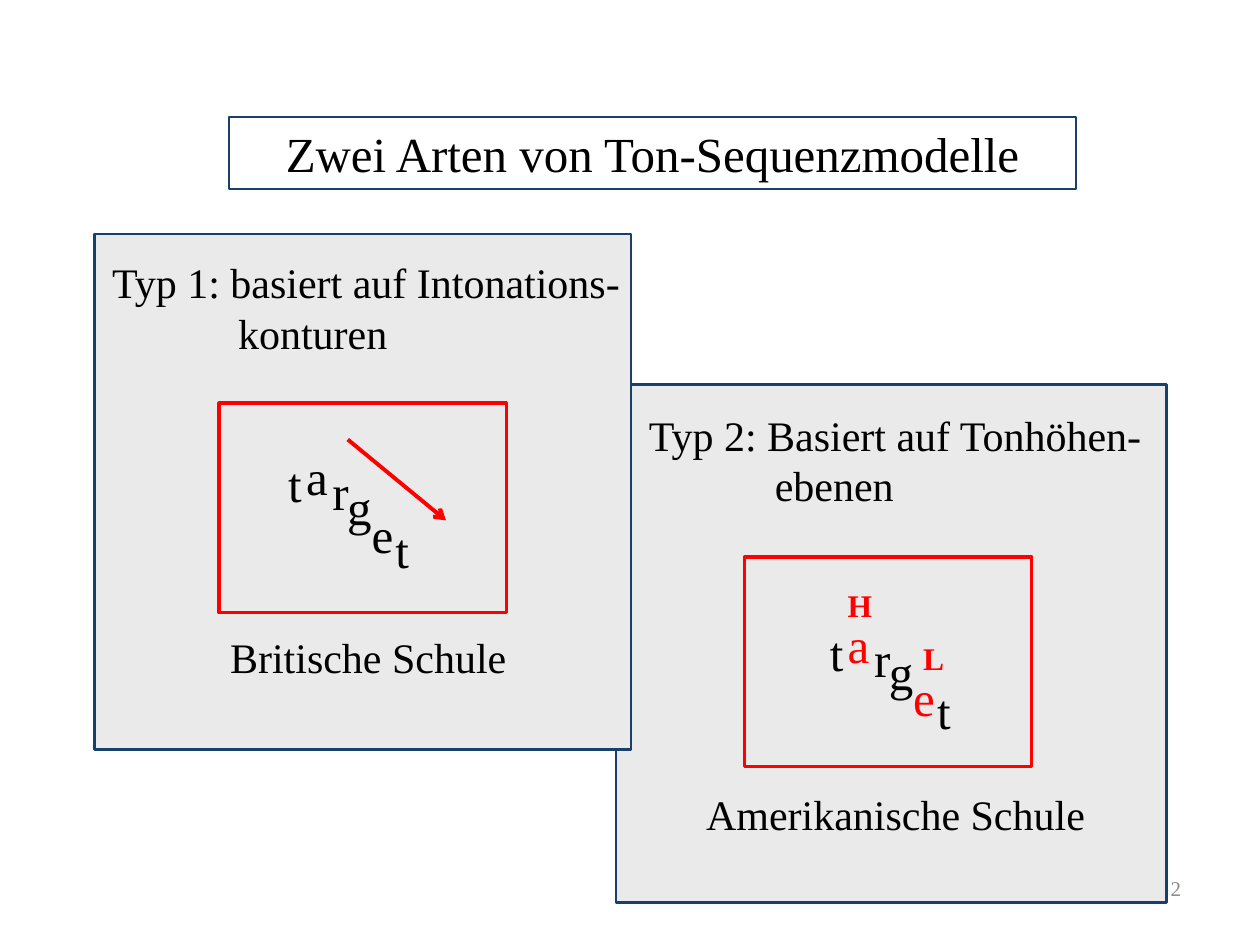
from lxml import etree
from pptx import Presentation
from pptx.dml.color import RGBColor
from pptx.enum.shapes import MSO_CONNECTOR, MSO_SHAPE
from pptx.enum.text import MSO_ANCHOR, MSO_AUTO_SIZE, PP_ALIGN
from pptx.oxml.ns import qn
from pptx.util import Cm, Pt

LEFT, CENTER, RIGHT = PP_ALIGN.LEFT, PP_ALIGN.CENTER, PP_ALIGN.RIGHT
TOP, MIDDLE = MSO_ANCHOR.TOP, MSO_ANCHOR.MIDDLE
RECTANGLE, STRAIGHT = MSO_SHAPE.RECTANGLE, MSO_CONNECTOR.STRAIGHT
NO_AUTOFIT = MSO_AUTO_SIZE.NONE
TITLE_ONLY = 5

FONT = "Times New Roman"
COLORS = {
    "text": "000000",
    "accent": "FF0000",
    "border": "19406B",
    "panel": "EAEAEA",
    "number": "8C8C8C",
}

# Letter, horizontal offset from the start of the word and box width, in cm
TARGET = [
    ("t", 0, 0.79),
    ("a", 0.36, 0.97),
    ("r", 0.89, 0.84),
    ("g", 1.19, 1.02),
    ("e", 1.68, 0.97),
    ("t", 2.16, 0.79),
]
BRITISH_DROPS = [0, -0.15, 0.15, 0.46, 1.02, 1.32]
AMERICAN_DROPS = [0, -0.15, 0.13, 0.38, 0.91, 1.17]


def color(name):
    return RGBColor.from_string(COLORS[name])


def write(shape, text, size, ink="text", align=LEFT, bold=False, anchor=TOP):
    frame = shape.text_frame
    frame.text = text
    frame.word_wrap = False
    frame.auto_size = NO_AUTOFIT
    frame.vertical_anchor = anchor
    para = frame.paragraphs[0]
    para.alignment = align
    for span in para.runs:
        span.font.name = FONT
        span.font.size = Pt(size)
        span.font.bold = bold
        span.font.color.rgb = color(ink)


def add_label(shapes, place, text, size, **style):
    box = shapes.add_textbox(*map(Cm, place))
    write(box, text, size, **style)
    return box


def set_outline(shape, name, width):
    shape.line.color.rgb = color(name)
    shape.line.width = Pt(width)


def add_rectangle(page, place, outline, width, fill=None):
    shape = page.shapes.add_shape(RECTANGLE, *map(Cm, place))
    shape.shadow.inherit = False
    set_outline(shape, outline, width)
    if fill:
        shape.fill.solid()
        shape.fill.fore_color.rgb = color(fill)
    else:
        shape.fill.background()


def add_title(page, place, text):
    title = page.shapes.title
    title.left, title.top, title.width, title.height = map(Cm, place)
    set_outline(title, "border", 1.5)
    write(title, text, 28, align=CENTER)


def add_heading(page, place, text):
    """Add a heading whose second line hangs behind the type number."""
    box = add_label(page.shapes, place, text, 24)
    properties = box.text_frame.paragraphs[0]._p.get_or_add_pPr()
    properties.set("marL", str(Cm(2.54)))
    properties.set("indent", str(-Cm(2.54)))


def add_contour_word(page, left, top, drops, accented=""):
    """Add the word as a group of letters that follow the pitch contour."""
    group = page.shapes.add_group_shape()
    for (letter, offset, width), drop in zip(TARGET, drops):
        ink = "accent" if letter in accented else "text"
        place = (left + offset, top + drop, width, 1.45)
        add_label(group.shapes, place, letter, 28, ink=ink)


def add_arrow(page, start, end):
    arrow = page.shapes.add_connector(STRAIGHT, *map(Cm, start + end))
    set_outline(arrow, "accent", 2.25)
    etree.SubElement(arrow.line._get_or_add_ln(), qn("a:tailEnd"), type="arrow")
    etree.SubElement(arrow._element.spPr, qn("a:effectLst"))


def main():
    deck = Presentation()
    deck.slide_width, deck.slide_height = Cm(25.4), Cm(19.05)
    page = deck.slides.add_slide(deck.slide_layouts[TITLE_ONLY])
    shapes = page.shapes

    add_title(page, (4.62, 2.36, 17.07, 1.45), "Zwei Arten von Ton-Sequenzmodelle")
    add_label(shapes, (18.14, 17.4, 5.92, 1.02), "2", 12,
              ink="number", align=RIGHT, anchor=MIDDLE)

    add_rectangle(page, (12.42, 7.75, 11.1, 10.44), "border", 1.5, "panel")
    add_rectangle(page, (1.9, 4.72, 10.82, 10.39), "border", 1.5, "panel")

    add_contour_word(page, 16.48, 12.42, AMERICAN_DROPS, accented="ae")
    add_label(shapes, (16.84, 11.68, 1.02, 1.02), "H", 18, ink="accent", bold=True)
    add_label(shapes, (18.36, 12.75, 0.94, 1.02), "L", 18, ink="accent", bold=True)
    add_contour_word(page, 5.56, 9.02, BRITISH_DROPS)

    add_heading(page, (2.01, 5.05, 10.85, 2.31),
                "Typ 1: basiert auf Intonations-\vkonturen")
    add_heading(page, (12.83, 8.13, 10.54, 2.31),
                "Typ 2: Basiert auf Tonhöhen-\vebenen")
    add_label(shapes, (13.94, 15.77, 8.23, 1.27), "Amerikanische Schule", 24,
              align=CENTER)
    add_label(shapes, (3.63, 12.6, 7.59, 1.27), "Britische Schule", 24,
              align=CENTER)

    add_arrow(page, (7.01, 8.86), (8.99, 10.49))
    for left, top in ((4.42, 8.13), (15.01, 11.23)):
        add_rectangle(page, (left, top, 5.79, 4.22), "accent", 2)

    deck.save("out.pptx")


if __name__ == "__main__":
    main()
